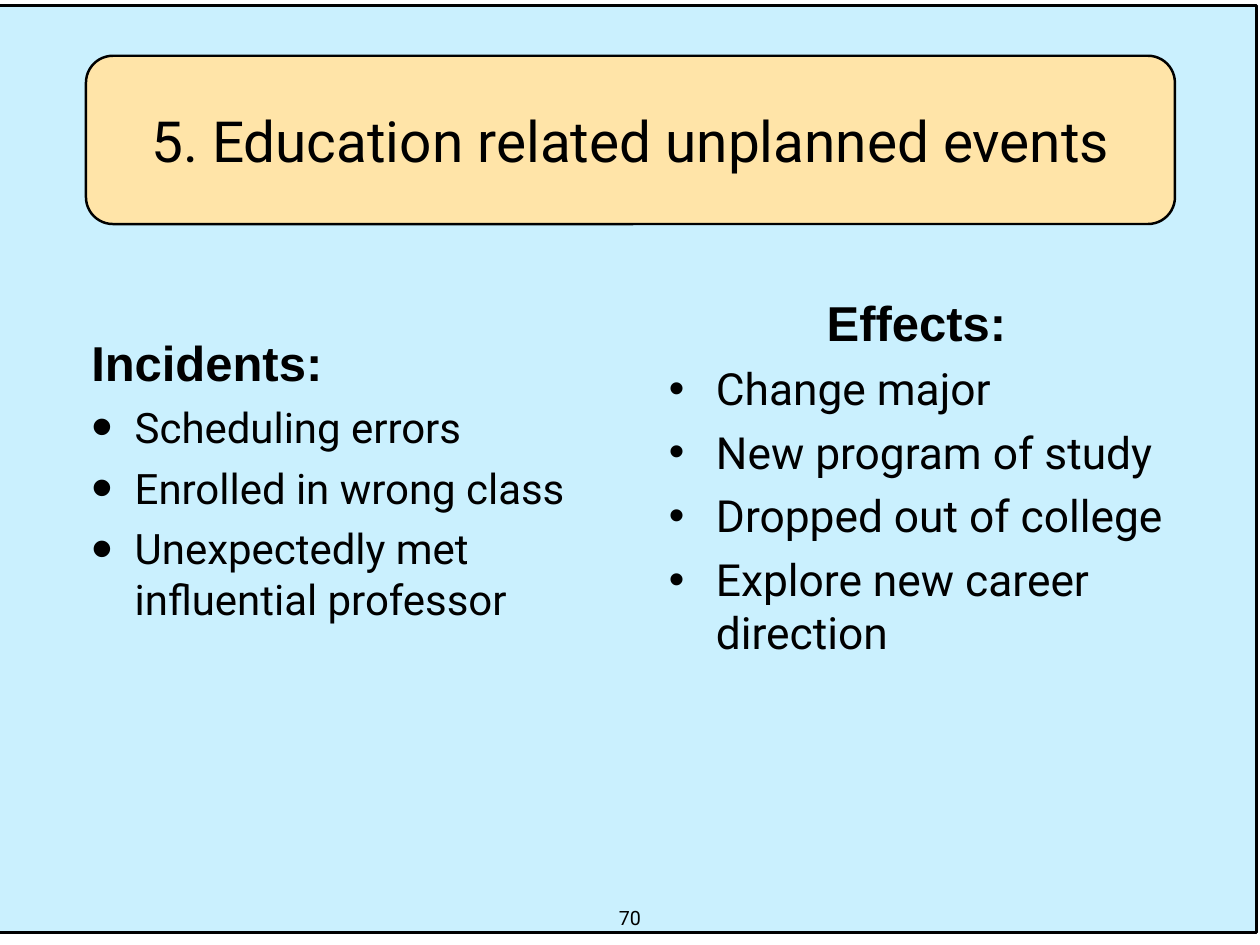
from dataclasses import dataclass

from lxml.etree import SubElement
from pptx import Presentation
from pptx.dml.color import RGBColor
from pptx.enum.shapes import MSO_SHAPE
from pptx.enum.text import MSO_ANCHOR, PP_ALIGN
from pptx.oxml.ns import qn
from pptx.shapes.base import BaseShape
from pptx.slide import Slide
from pptx.text.text import TextFrame
from pptx.util import Emu, Pt

PX = 9144
INSET = 6
COLORS = {"ink": "000000", "sky": "CAF0FE", "cream": "FFE4A8"}


@dataclass(frozen=True)
class Area:
    left: int
    top: int
    width: int
    height: int


@dataclass(frozen=True)
class Column:
    area: Area
    heading: str
    items: tuple[str, ...]
    size: float
    indent: int
    bullet_percent: int
    align: PP_ALIGN


COLUMNS = (
    Column(
        Area(97, 369, 571, 470),
        "Incidents:",
        ("Scheduling errors", "Enrolled in wrong class", "Unexpectedly met influential professor"),
        size=34.1,
        indent=49,
        bullet_percent=145,
        align=PP_ALIGN.LEFT,
    ),
    Column(
        Area(749, 324, 571, 554),
        "Effects:",
        ("Change major", "New program of study", "Dropped out of college", "Explore new career direction"),
        size=36,
        indent=53,
        bullet_percent=100,
        align=PP_ALIGN.CENTER,
    ),
)


def px(length: int) -> Emu:
    return Emu(length * PX)


def color(name: str) -> RGBColor:
    return RGBColor.from_string(COLORS[name])


def bounds(area: Area) -> tuple[Emu, Emu, Emu, Emu]:
    return px(area.left), px(area.top), px(area.width), px(area.height)


def add_panel(page: Slide, kind: MSO_SHAPE, area: Area, fill: str) -> BaseShape:
    panel = page.shapes.add_shape(kind, *bounds(area))
    panel.shadow.inherit = False
    panel.fill.solid()
    panel.fill.fore_color.rgb = color(fill)
    panel.line.color.rgb = color("ink")
    panel.line.width = Pt(2)
    return panel


def prepare_frame(frame: TextFrame, *, anchor: MSO_ANCHOR = MSO_ANCHOR.TOP) -> TextFrame:
    frame.word_wrap = True
    frame.vertical_anchor = anchor
    frame.margin_left = frame.margin_right = px(INSET)
    frame.margin_top = frame.margin_bottom = px(INSET)
    return frame


def write(
    frame: TextFrame,
    text: str,
    *,
    size: float,
    font: str = "Roboto",
    bold: bool = False,
    align: PP_ALIGN = PP_ALIGN.LEFT,
    before: float = 0,
    indent: int = 0,
    bullet_percent: int = 0,
) -> None:
    para = frame.paragraphs[0] if not frame.text else frame.add_paragraph()
    para.alignment = align
    para.space_before = Pt(before)
    span = para.add_run()
    span.text = text
    span.font.name = font
    span.font.size = Pt(size)
    span.font.bold = bold
    span.font.color.rgb = color("ink")
    properties = para._p.get_or_add_pPr()
    properties.set("marL", str(px(indent)))
    properties.set("indent", str(px(-indent)))
    if bullet_percent:
        SubElement(properties, qn("a:buSzPct")).set("val", str(bullet_percent * 1000))
        SubElement(properties, qn("a:buFont")).set("typeface", "Arial")
        SubElement(properties, qn("a:buChar")).set("char", "•")


def add_column(page: Slide, column: Column) -> None:
    box = page.shapes.add_textbox(*bounds(column.area))
    frame = prepare_frame(box.text_frame)
    write(
        frame, column.heading, size=39.8, font="Arial", bold=True,
        align=column.align, before=8.5, indent=column.indent,
    )
    for item in column.items:
        write(
            frame, item, size=column.size, before=8.5,
            indent=column.indent, bullet_percent=column.bullet_percent,
        )


def main() -> None:
    deck = Presentation()
    deck.slide_width, deck.slide_height = px(1422), px(1067)
    page = deck.slides.add_slide(deck.slide_layouts[6])

    add_panel(page, MSO_SHAPE.RECTANGLE, Area(-4, 6, 1422, 1047), "sky")
    banner = add_panel(page, MSO_SHAPE.ROUNDED_RECTANGLE, Area(97, 63, 1229, 190), "cream")
    banner.adjustments[0] = 0.16
    title = prepare_frame(banner.text_frame, anchor=MSO_ANCHOR.MIDDLE)
    write(title, "5. Education related unplanned events", size=46.1, align=PP_ALIGN.CENTER)

    for column in COLUMNS:
        add_column(page, column)

    number_box = page.shapes.add_textbox(*bounds(Area(681, 1017, 60, 38)))
    number = prepare_frame(number_box.text_frame)
    write(number, "70", size=16, align=PP_ALIGN.CENTER)

    deck.save("out.pptx")


if __name__ == "__main__":
    main()
